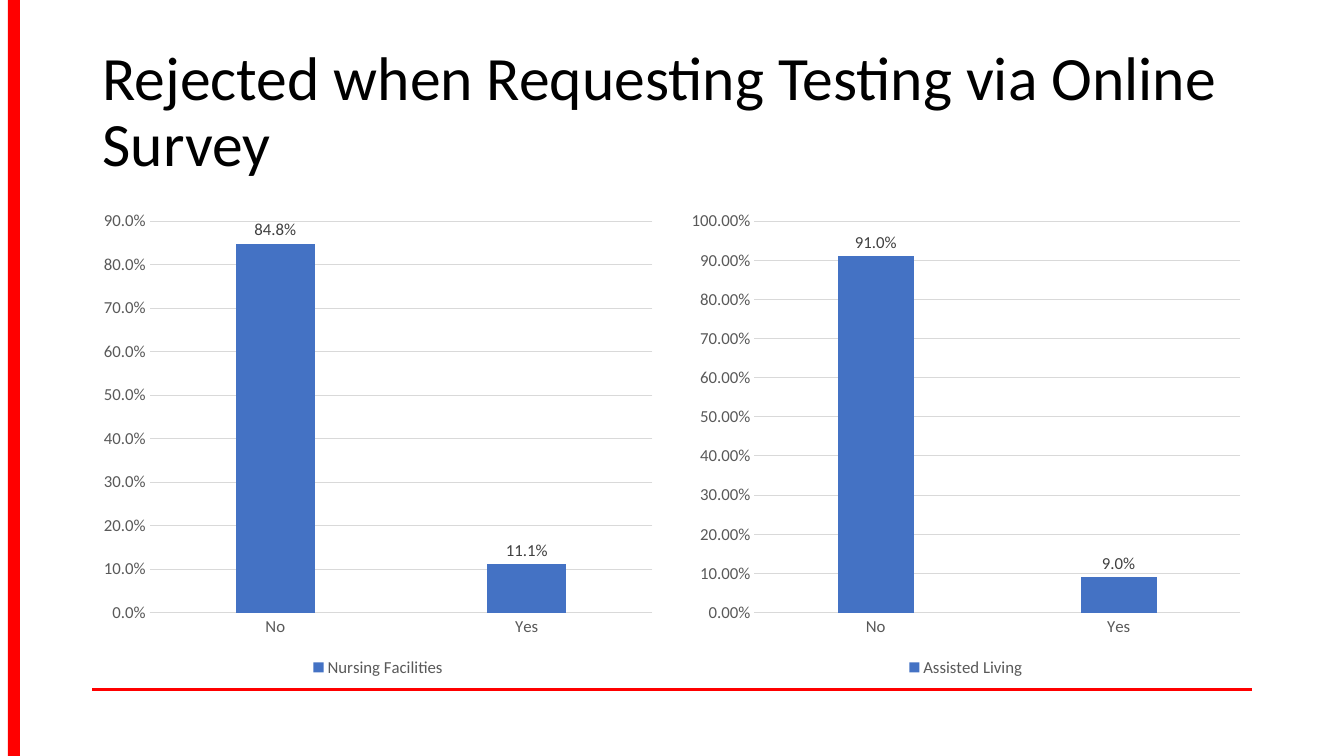
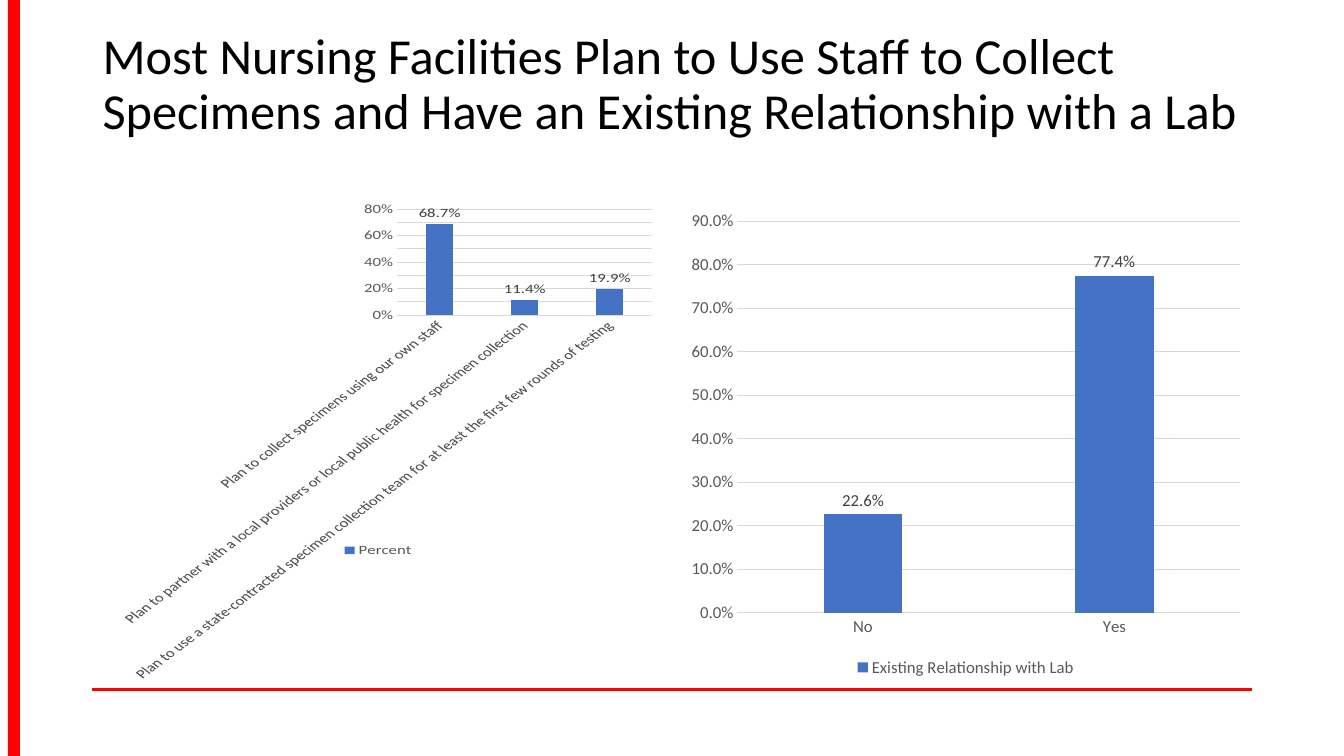
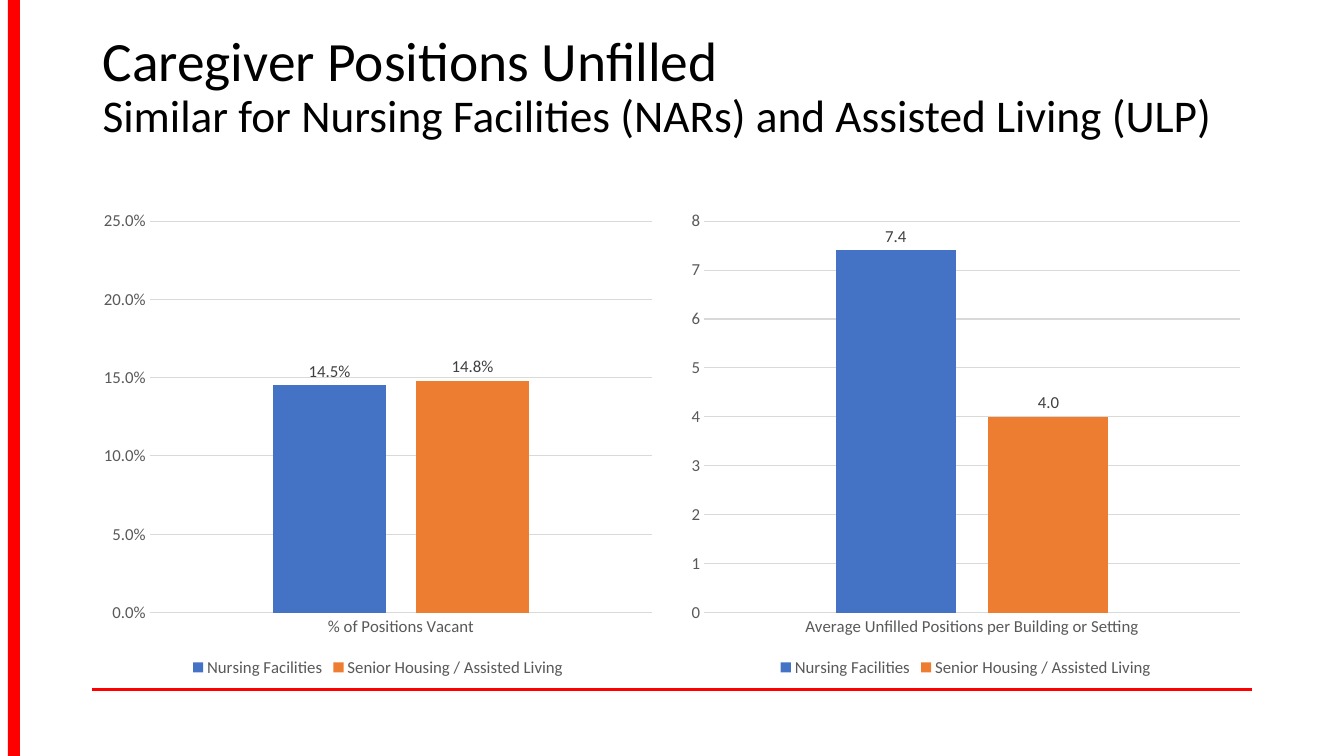
from lxml.etree import SubElement
from pptx import Presentation
from pptx.chart.data import CategoryChartData
from pptx.dml.color import RGBColor
from pptx.enum.chart import XL_CHART_TYPE, XL_LABEL_POSITION, XL_LEGEND_POSITION, XL_TICK_MARK
from pptx.enum.shapes import MSO_CONNECTOR, MSO_SHAPE
from pptx.enum.text import MSO_ANCHOR, MSO_AUTO_SIZE, PP_ALIGN
from pptx.oxml.ns import qn
from pptx.util import Cm, Pt

COLORS = {
    "accent": "FF0000",
    "title": "000000",
    "axis": "595959",
    "label": "404040",
    "grid": "D9D9D9",
    "series": ["4472C4", "ED7D31"],
}
FONT = "Calibri"
LEFT, WIDTH, GAP = 2.33, 29.21, 0.41
CHART_TOP, CHART_HEIGHT = 5.08, 12.09
CHART_WIDTH = (WIDTH - GAP) / 2
RULE_TOP = 17.37
TITLE_FRAME = {
    "word_wrap": True,
    "auto_size": MSO_AUTO_SIZE.NONE,
    "vertical_anchor": MSO_ANCHOR.MIDDLE,
}
TITLE_PARAGRAPH = {
    "alignment": PP_ALIGN.LEFT,
    "line_spacing": 0.9,
    "space_before": Pt(0),
}

SLIDES = [
    {
        "title": [("Rejected when Requesting Testing via Online Survey", 44)],
        "charts": [
            {"cats": ["No", "Yes"], "series": {"Nursing Facilities": [0.848, 0.111]}},
            {"cats": ["No", "Yes"], "series": {"Assisted Living": [0.91, 0.09]}, "axis_format": "0.00%"},
        ],
    },
    {
        "title": [
            (
                "Most Nursing Facilities Plan to Use Staff to Collect Specimens "
                "and Have an Existing Relationship with a Lab",
                36,
            )
        ],
        "margin_bottom": 1.52,
        "charts": [
            {
                "cats": [
                    "Plan to collect specimens using our own staff",
                    "Plan to partner with a local providers or local public health for specimen collection",
                    "Plan to use a state-contracted specimen collection team for at least "
                    "the first few rounds of testing",
                ],
                "series": {"Percent": [0.687, 0.114, 0.199]},
                "axis_format": "0%",
            },
            {"cats": ["No", "Yes"], "series": {"Existing Relationship with Lab": [0.226, 0.774]}},
        ],
    },
    {
        "title": [
            ("Caregiver Positions Unfilled", 39.6),
            ("Similar for Nursing Facilities (NARs) and Assisted Living (ULP)", 32.4),
        ],
        "title_top": 0.38,
        "charts": [
            {
                "cats": ["% of Positions Vacant"],
                "series": {"Nursing Facilities": [0.145], "Senior Housing / Assisted Living": [0.148]},
                "scale": {"minimum_scale": 0, "maximum_scale": 0.25},
            },
            {
                "cats": ["Average Unfilled Positions per Building or Setting"],
                "series": {"Nursing Facilities": [7.4], "Senior Housing / Assisted Living": [4]},
                "axis_format": "General",
                "label_format": "#,##0.0",
            },
        ],
    },
]


def style_font(font, size, color):
    for name, value in {"name": FONT, "size": Pt(size), "bold": False}.items():
        setattr(font, name, value)
    font.color.rgb = RGBColor.from_string(COLORS[color])


def add_column_chart(s, spec_values, left):
    data = CategoryChartData()
    data.categories = spec_values["cats"]
    for name, values in spec_values["series"].items():
        data.add_series(name, values)
    chart = s.shapes.add_chart(
        XL_CHART_TYPE.COLUMN_CLUSTERED, Cm(left), Cm(CHART_TOP), Cm(CHART_WIDTH), Cm(CHART_HEIGHT), data
    ).chart
    style_font(chart.font, 10, "title")
    chart.has_title = False
    chart.has_legend = True
    chart.legend.position = XL_LEGEND_POSITION.BOTTOM
    chart.legend.include_in_layout = False
    style_font(chart.legend.font, 12, "axis")

    cat_axis, val_axis = chart.category_axis, chart.value_axis
    for axis in (cat_axis, val_axis):
        axis.major_tick_mark = axis.minor_tick_mark = XL_TICK_MARK.NONE
        style_font(axis.tick_labels.font, 12, "axis")
    for line in (cat_axis.format.line, val_axis.major_gridlines.format.line):
        line.color.rgb = RGBColor.from_string(COLORS["grid"])
        line.width = Pt(0.75)
    val_axis.format.line.fill.background()
    for name, value in spec_values.get("scale", {}).items():
        setattr(val_axis, name, value)
    for body in chart.element.xpath(".//c:catAx//a:bodyPr | .//c:valAx//a:bodyPr"):
        body.set("rot", "-60000000")

    plot = chart.plots[0]
    for name, value in {"gap_width": 219, "overlap": -27, "vary_by_categories": False}.items():
        setattr(plot, name, value)
    plot.has_data_labels = True
    labels = plot.data_labels
    labels.show_value = True
    labels.position = XL_LABEL_POSITION.OUTSIDE_END
    style_font(labels.font, 12, "label")
    for target, key in ((val_axis.tick_labels, "axis_format"), (labels, "label_format")):
        target.number_format = spec_values.get(key, "0.0%")
        target.number_format_is_linked = False
    for series, color in zip(plot.series, COLORS["series"]):
        series.format.fill.solid()
        series.format.fill.fore_color.rgb = RGBColor.from_string(color)


prs = Presentation()
prs.slide_width, prs.slide_height = Cm(33.87), Cm(19.05)
layout = prs.slide_layouts[5]
title = layout.placeholders[0]
for name, value in {"left": LEFT, "top": 1.02, "width": WIDTH, "height": 3.68}.items():
    setattr(title, name, Cm(value))
slides = [prs.slides.add_slide(layout) for _ in SLIDES]

accent = RGBColor.from_string(COLORS["accent"])
rule = slides[0].shapes.add_connector(
    MSO_CONNECTOR.STRAIGHT, Cm(LEFT), Cm(RULE_TOP), Cm(LEFT + WIDTH), Cm(RULE_TOP)
)
rule.line.color.rgb = accent
rule.line.width = Pt(2)
SubElement(rule.element.spPr, qn("a:effectLst"))
band = slides[0].shapes.add_shape(MSO_SHAPE.RECTANGLE, Cm(0.2), 0, Cm(0.3), prs.slide_height)
band.shadow.inherit = False
band.fill.solid()
band.fill.fore_color.rgb = accent
band.line.fill.background()
for number, sp in enumerate((rule, band), 20):
    sp.element.xpath(".//p:cNvPr")[0].set("id", str(number))
    layout.shapes.element.append(sp.element)

for s, content in zip(slides, SLIDES):
    title = s.shapes.title
    if "title_top" in content:
        box = {"left": LEFT, "top": content["title_top"], "width": WIDTH, "height": 3.68}
        for name, value in box.items():
            setattr(title, name, Cm(value))
    tf = title.text_frame
    for name, value in TITLE_FRAME.items():
        setattr(tf, name, value)
    if "margin_bottom" in content:
        tf.margin_bottom = Cm(content["margin_bottom"])
    for i, (text, size) in enumerate(content["title"]):
        p = tf.add_paragraph() if i else tf.paragraphs[0]
        for name, value in TITLE_PARAGRAPH.items():
            setattr(p, name, value)
        r = p.add_run()
        r.text = text
        style_font(r.font, size, "title")
    for i, chart_values in enumerate(content["charts"]):
        add_column_chart(s, chart_values, LEFT + i * (CHART_WIDTH + GAP))

prs.save("out.pptx")
